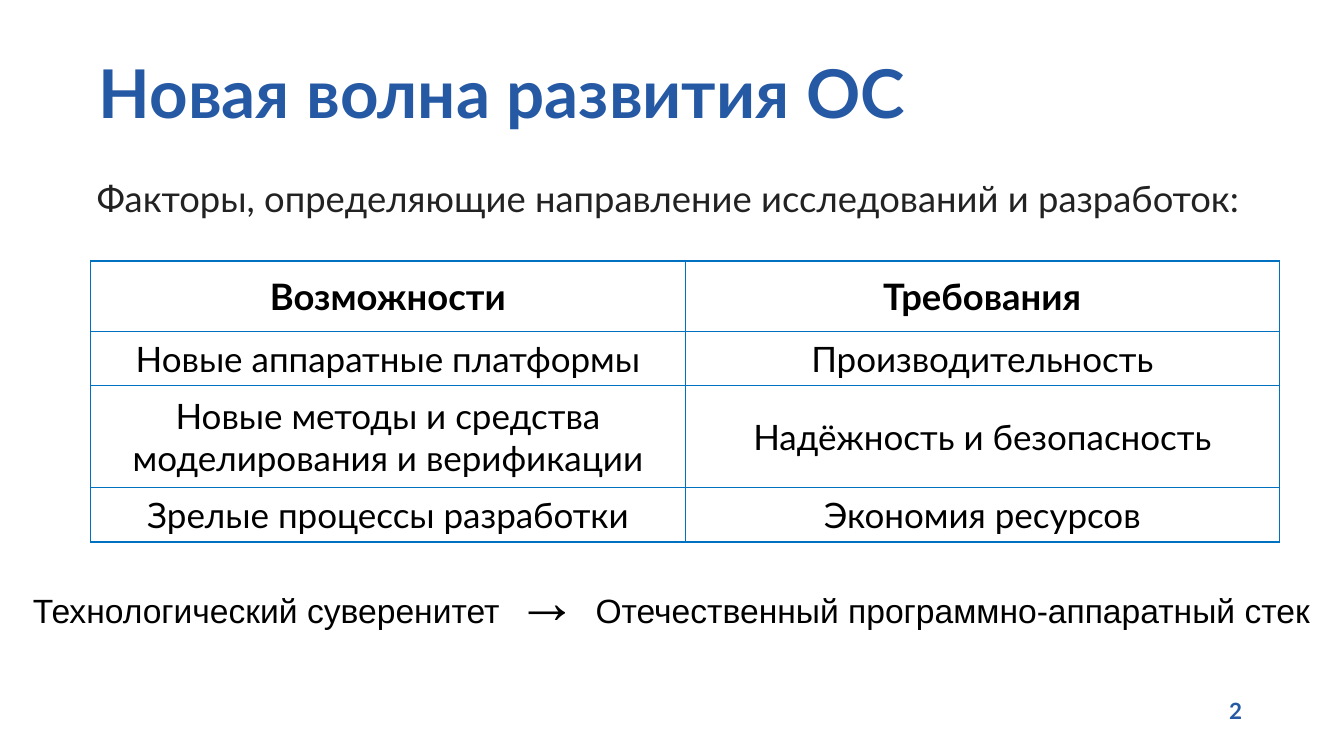
from dataclasses import dataclass

from lxml import etree
from pptx import Presentation
from pptx.dml.color import RGBColor
from pptx.enum.text import MSO_ANCHOR, PP_ALIGN
from pptx.oxml.ns import qn
from pptx.util import Inches, Pt

LEFT, CENTER, RIGHT = PP_ALIGN.LEFT, PP_ALIGN.CENTER, PP_ALIGN.RIGHT
TOP, MIDDLE = MSO_ANCHOR.TOP, MSO_ANCHOR.MIDDLE


@dataclass(frozen=True)
class Theme:
    """Colours, fonts and type sizes of the slide."""
    accent: str = "2659A4"
    lead: str = "222222"
    text: str = "000000"
    border: str = "0070C0"
    main_font: str = "Lato"
    note_font: str = "Arial"
    title_size: int = 48
    lead_size: int = 26
    header_size: int = 26
    cell_size: int = 25
    note_size: int = 24
    arrow_size: int = 44
    number_size: int = 16


THEME = Theme()
FACTORS = [
    ("Возможности", "Требования"),
    ("Новые аппаратные платформы", "Производительность"),
    ("Новые методы и средства моделирования и верификации",
     "Надёжность и безопасность"),
    ("Зрелые процессы разработки", "Экономия ресурсов"),
]
ROW_HEIGHTS = (0.7, 0.53, 1.01, 0.54)


def style_run(r, size, color, font=THEME.main_font, bold=False):
    """Format one run."""
    r.font.name, r.font.size, r.font.bold = font, Pt(size), bold
    r.font.color.rgb = RGBColor.from_string(color)


def set_margins(frame, horizontal, vertical):
    """Set the inner margins of a text frame or a cell."""
    frame.margin_left = frame.margin_right = Inches(horizontal)
    frame.margin_top = frame.margin_bottom = Inches(vertical)


def add_box(s, box, margins, anchor=TOP, wrap=True):
    """Add an empty text box and return its text frame."""
    tf = s.shapes.add_textbox(*map(Inches, box)).text_frame
    tf.word_wrap, tf.vertical_anchor = wrap, anchor
    set_margins(tf, *margins)
    return tf


def add_line(s, box, text, size, color, margins=(0.06, 0.05), anchor=TOP,
             align=LEFT, bold=False, spacing=0.9):
    """Add a text box holding one uniformly styled paragraph."""
    p = add_box(s, box, margins, anchor).paragraphs[0]
    p.text, p.alignment, p.line_spacing = text, align, spacing
    style_run(p.runs[0], size, color, bold=bold)


def add_cell_borders(cell):
    """Draw a thin line on all four sides of a cell."""
    tc_pr = cell._tc.get_or_add_tcPr()
    for i, side in enumerate(("a:lnL", "a:lnR", "a:lnT", "a:lnB")):
        ln = etree.Element(qn(side), w=str(Pt(1)))
        fill = etree.SubElement(ln, qn("a:solidFill"))
        etree.SubElement(fill, qn("a:srgbClr"), val=THEME.border)
        tc_pr.insert(i, ln)


def add_factor_table(s, box):
    """Add the table of opportunities and requirements."""
    columns = len(FACTORS[0])
    table = s.shapes.add_table(
        len(FACTORS), columns, *map(Inches, box)).table
    table.horz_banding = False
    for column in table.columns:
        column.width = Inches(box[2] / columns)
    for i, (row, height) in enumerate(zip(FACTORS, ROW_HEIGHTS)):
        table.rows[i].height = Inches(height)
        size = THEME.cell_size if i else THEME.header_size
        for j, text in enumerate(row):
            cell = table.cell(i, j)
            cell.fill.background()
            cell.vertical_anchor = MIDDLE
            set_margins(cell, 0.12, 0.06)
            p = cell.text_frame.paragraphs[0]
            p.text, p.alignment = text, CENTER
            style_run(p.runs[0], size, THEME.text, bold=i == 0)
            add_cell_borders(cell)


def add_conclusion(s, box):
    """Add the closing line with its large arrow."""
    p = add_box(s, box, (0.1, 0.05), wrap=False).paragraphs[0]
    p.alignment = CENTER
    for text, size in (
            ("Технологический суверенитет", THEME.note_size),
            (" → ", THEME.arrow_size),
            ("Отечественный программно-аппаратный стек", THEME.note_size)):
        r = p.add_run()
        r.text = text
        style_run(r, size, THEME.text, THEME.note_font)


def build_slide(prs):
    """Place every region of the slide."""
    s = prs.slides.add_slide(prs.slide_layouts[6])
    add_line(s, (0.92, 0.07, 11.06, 1.78), "Новая волна развития ОС",
             THEME.title_size, THEME.accent, anchor=MIDDLE, bold=True)
    add_line(s, (0.9, 1.75, 11.53, 0.8),
             "Факторы, определяющие направление исследований и разработок:",
             THEME.lead_size, THEME.lead)
    add_factor_table(s, (0.9, 2.59, 11.79, sum(ROW_HEIGHTS)))
    add_conclusion(s, (0.21, 5.53, 12.9, 0.84))
    add_line(s, (12.09, 6.86, 0.23, 0.37), "2", THEME.number_size,
             THEME.accent, (0, 0.05), MIDDLE, RIGHT, True, 1.0)


def main():
    """Build and save the presentation."""
    prs = Presentation()
    prs.slide_width, prs.slide_height = Inches(13.33), Inches(7.5)
    build_slide(prs)
    prs.save("out.pptx")


if __name__ == "__main__":
    main()
